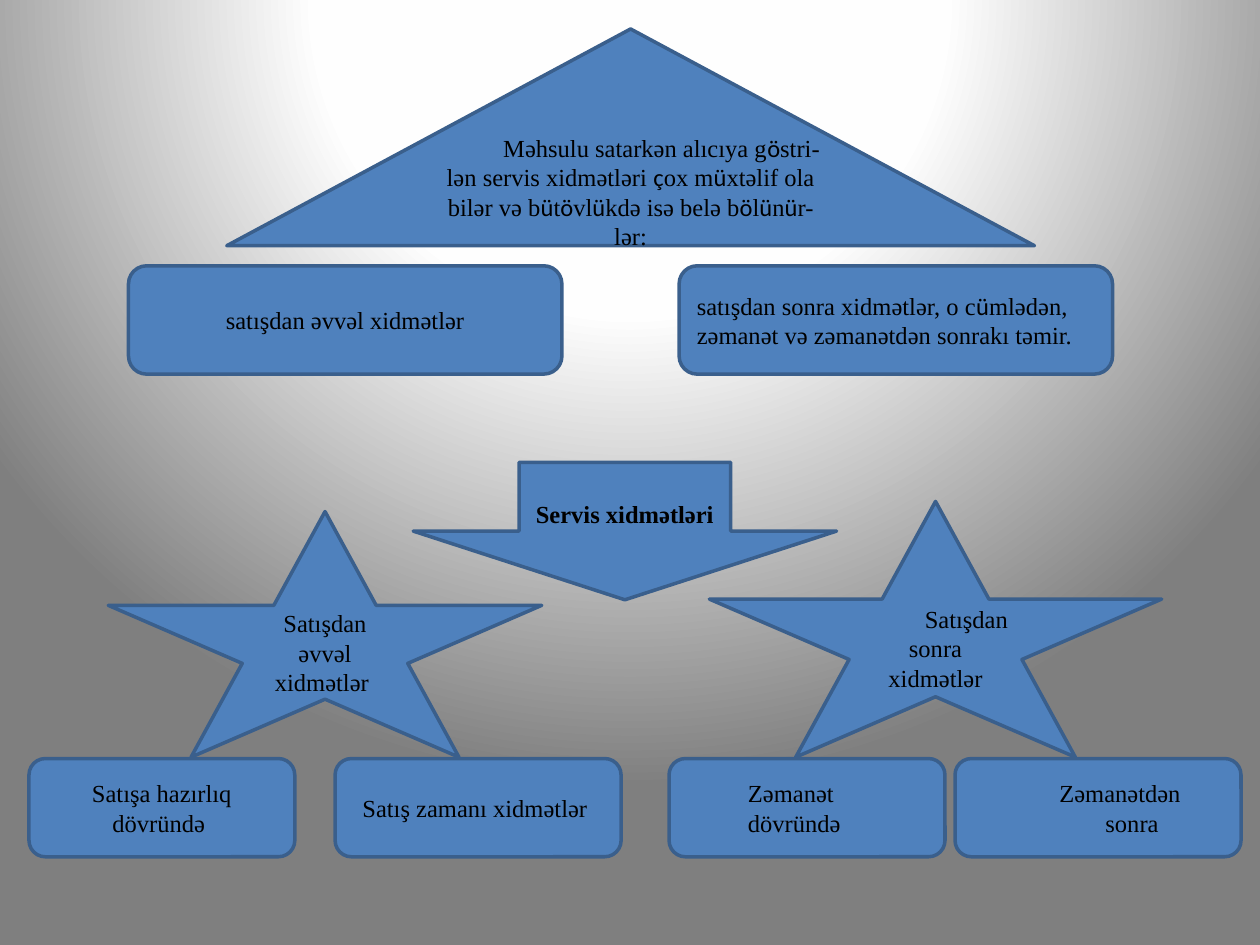
from itertools import groupby

from pptx import Presentation
from pptx.dml.color import RGBColor as Rgb
from pptx.enum.shapes import MSO_SHAPE as Kind
from pptx.enum.text import MSO_ANCHOR as Anchor, PP_ALIGN as Align
from pptx.oxml import parse_xml
from pptx.util import Inches, Pt

THEME = {
    "fill": "4F81BD",
    "line": "3A5F8C",
    "text": "000000",
    "width": 2,
    "size": 14,
    "font": "Times New Roman",
    "accent": "Calibri",
    "back": [(0, "FFFFFF"), (40, "FEFEFE"), (100, "7F7F7F")],
}
FRAME = {"word_wrap": True, "vertical_anchor": Anchor.MIDDLE}
FONT = {"size": Pt(THEME["size"]), "bold": False}

TAB = 0.49
MID, LEFT = Align.CENTER, Align.LEFT
ROW = {"upper": (2.11, 3.44, 0.86), "lower": (6.02, None, 0.78)}

HEADS = [
    (Kind.ISOSCELES_TRIANGLE, (1.8, 0.23, 6.41, 1.72), MID,
     [("Məhsulu satarkən alıcıya göstri-lən servis xidmətləri çox müxtəlif "
       "ola bilər və bütövlükdə isə belə bölünür-lər:", TAB)], {"mixed": True}),
]
UPPER = [
    (1.02, MID, "satışdan əvvəl xidmətlər"),
    (5.39, LEFT, "satışdan sonra xidmətlər, o cümlədən, "
                 "zəmanət və zəmanətdən sonrakı təmir."),
]
CORE = [
    (Kind.DOWN_ARROW, (3.28, 3.67, 3.36, 1.09), MID,
     [("Servis xidmətləri", 0)], {"bold": True}),
    (Kind.STAR_5_POINT, (0.86, 4.06, 3.44, 1.95), MID,
     [("Satışdan əvvəl xidmətlər ", 0)], {}),
    (Kind.STAR_5_POINT, (5.63, 3.98, 3.59, 2.03), MID,
     [("Satışdan sonra xidmətlər", TAB)], {}),
]
LOWER = [
    (0.23, 2.11, MID, [("Satışa hazırlıq dövründə ", 0)]),
    (5.31, 2.19, LEFT, [("Zəmanət", TAB), ("dövründə", TAB)]),
    (2.66, 2.27, MID, [("Satış zamanı xidmətlər ", 0)]),
    (7.58, 2.27, MID, [("Zəmanətdən", 0.35), ("sonra", 0.54)]),
]


def set_all(item, values):
    for name, value in values.items():
        setattr(item, name, value)


def paint(slide):
    stops = "".join(
        f'<a:gs pos="{pos * 1000}"><a:srgbClr val="{tone}"/></a:gs>'
        for pos, tone in THEME["back"])
    slide.background.fill.solid()
    props = slide.background.fill._xPr
    for node in list(props):
        props.remove(node)
    props.append(parse_xml(
        '<a:gradFill xmlns:a="http://schemas.openxmlformats.org/drawingml/2006/main" '
        f'rotWithShape="1"><a:gsLst>{stops}</a:gsLst><a:path path="circle">'
        '<a:fillToRect l="50000" t="-80000" r="50000" b="180000"/>'
        '</a:path></a:gradFill>'))
    props.append(props.makeelement(
        "{http://schemas.openxmlformats.org/drawingml/2006/main}effectLst", {}))


def write(para, text, mixed, bold):
    for accent, part in groupby(text, lambda sign: mixed and sign in "öüç"):
        run = para.add_run()
        run.text = "".join(part)
        name = THEME["accent" if accent else "font"]
        set_all(run.font, {**FONT, "name": name, "bold": bold})
        run.font.color.rgb = Rgb.from_string(THEME["text"])


def draw(slide, kind, box, align, lines, mixed=False, bold=False):
    shape = slide.shapes.add_shape(kind, *map(Inches, box))
    shape.shadow.inherit = False
    shape.fill.solid()
    shape.fill.fore_color.rgb = Rgb.from_string(THEME["fill"])
    shape.line.color.rgb = Rgb.from_string(THEME["line"])
    shape.line.width = Pt(THEME["width"])
    frame = shape.text_frame
    set_all(frame, FRAME)
    for at, (text, indent) in enumerate(lines):
        para = frame.add_paragraph() if at else frame.paragraphs[0]
        para.alignment = align
        if indent:
            props = para._p.get_or_add_pPr()
            props.set("marL", "0")
            props.set("indent", str(Inches(indent)))
        write(para, text, mixed, bold)


def main():
    deck = Presentation()
    set_all(deck, {"slide_width": Inches(10), "slide_height": Inches(7.5)})
    slide = deck.slides.add_slide(deck.slide_layouts[6])
    paint(slide)

    top, wide, high = ROW["upper"]
    upper = [(Kind.ROUNDED_RECTANGLE, (left, top, wide, high), align,
              [(text, 0)], {"mixed": True}) for left, align, text in UPPER]
    top, _, high = ROW["lower"]
    lower = [(Kind.ROUNDED_RECTANGLE, (left, top, wide, high), align, lines, {})
             for left, wide, align, lines in LOWER]

    for kind, box, align, lines, style in HEADS + upper + CORE + lower:
        draw(slide, kind, box, align, lines, **style)
    deck.save("out.pptx")


if __name__ == "__main__":
    main()
